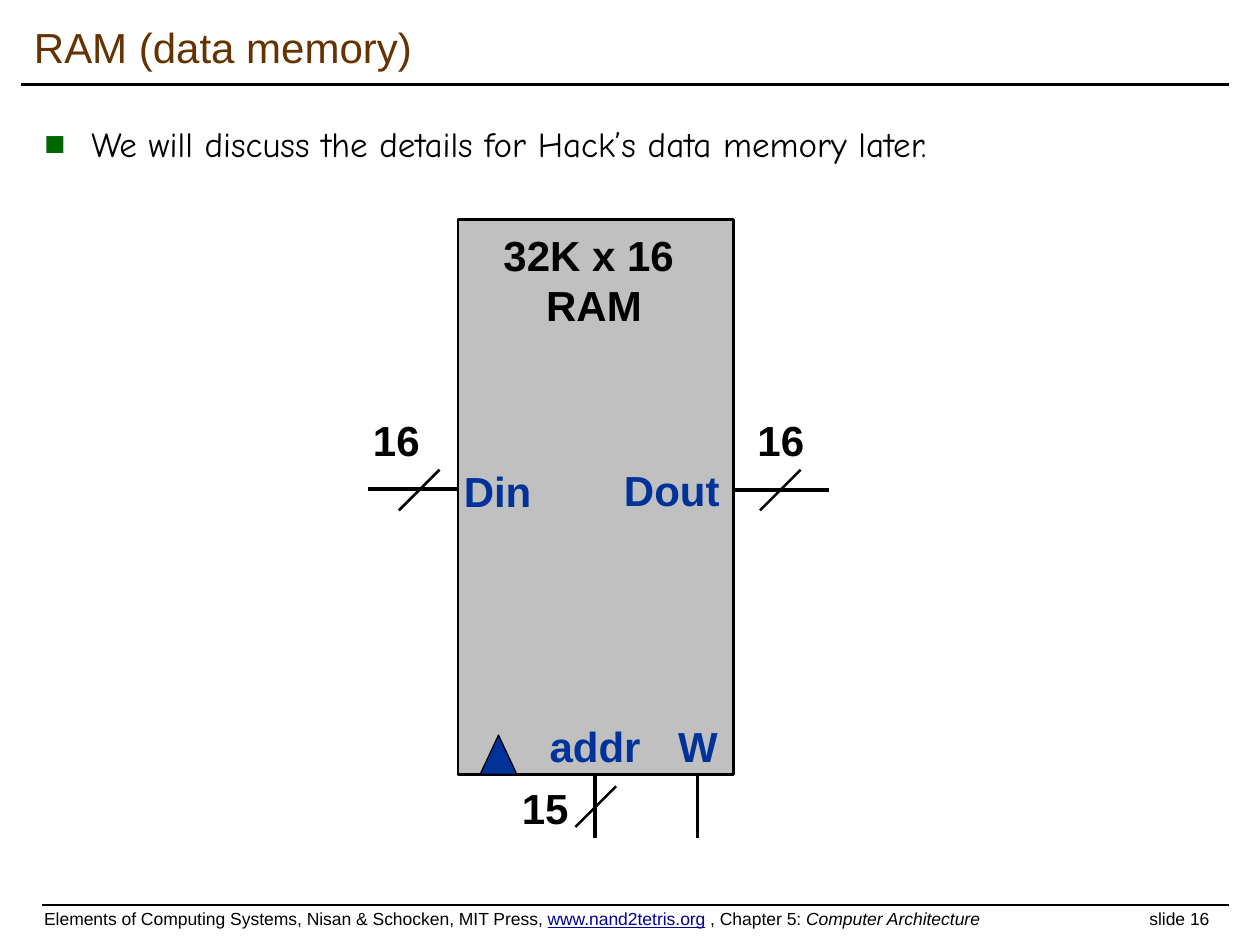
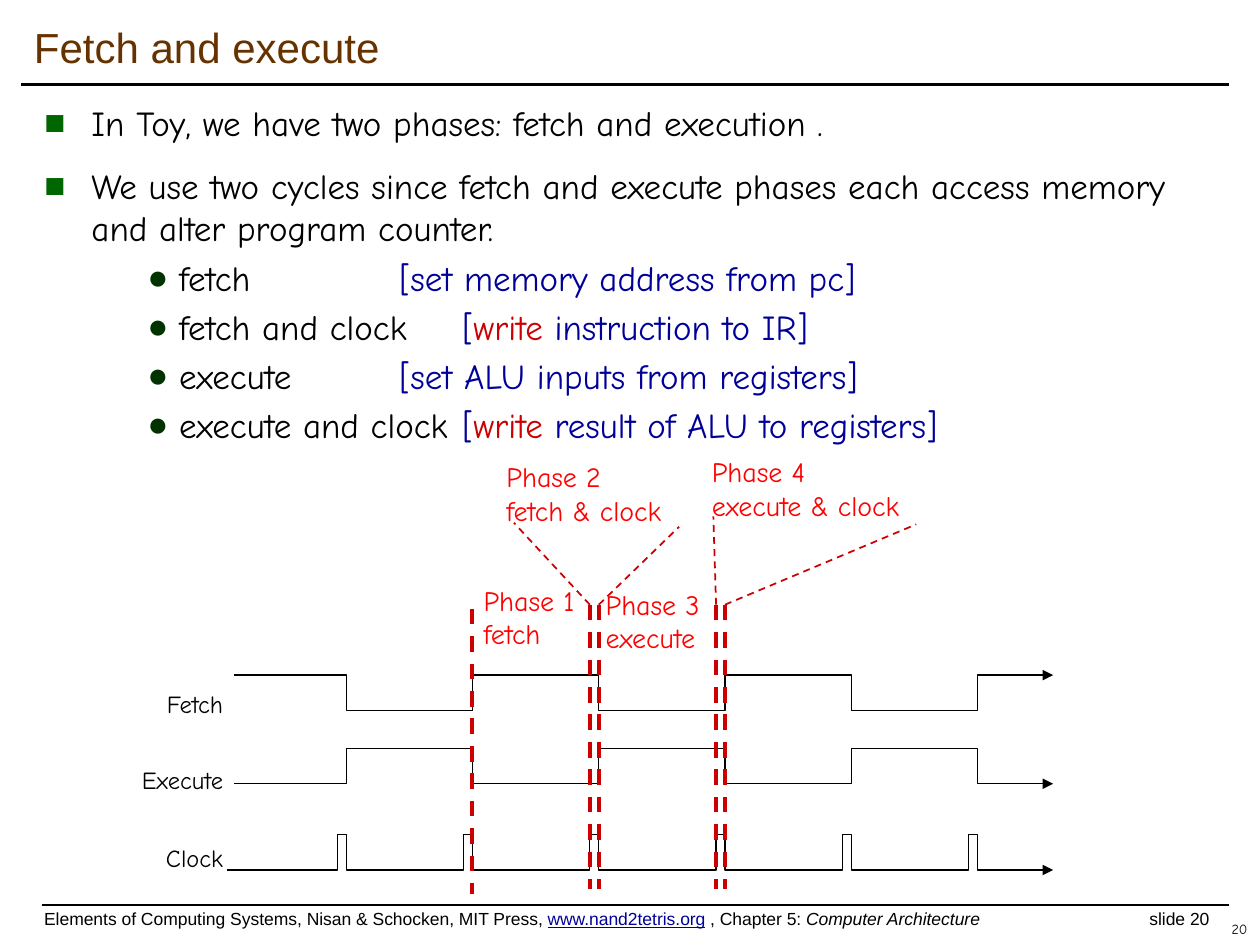
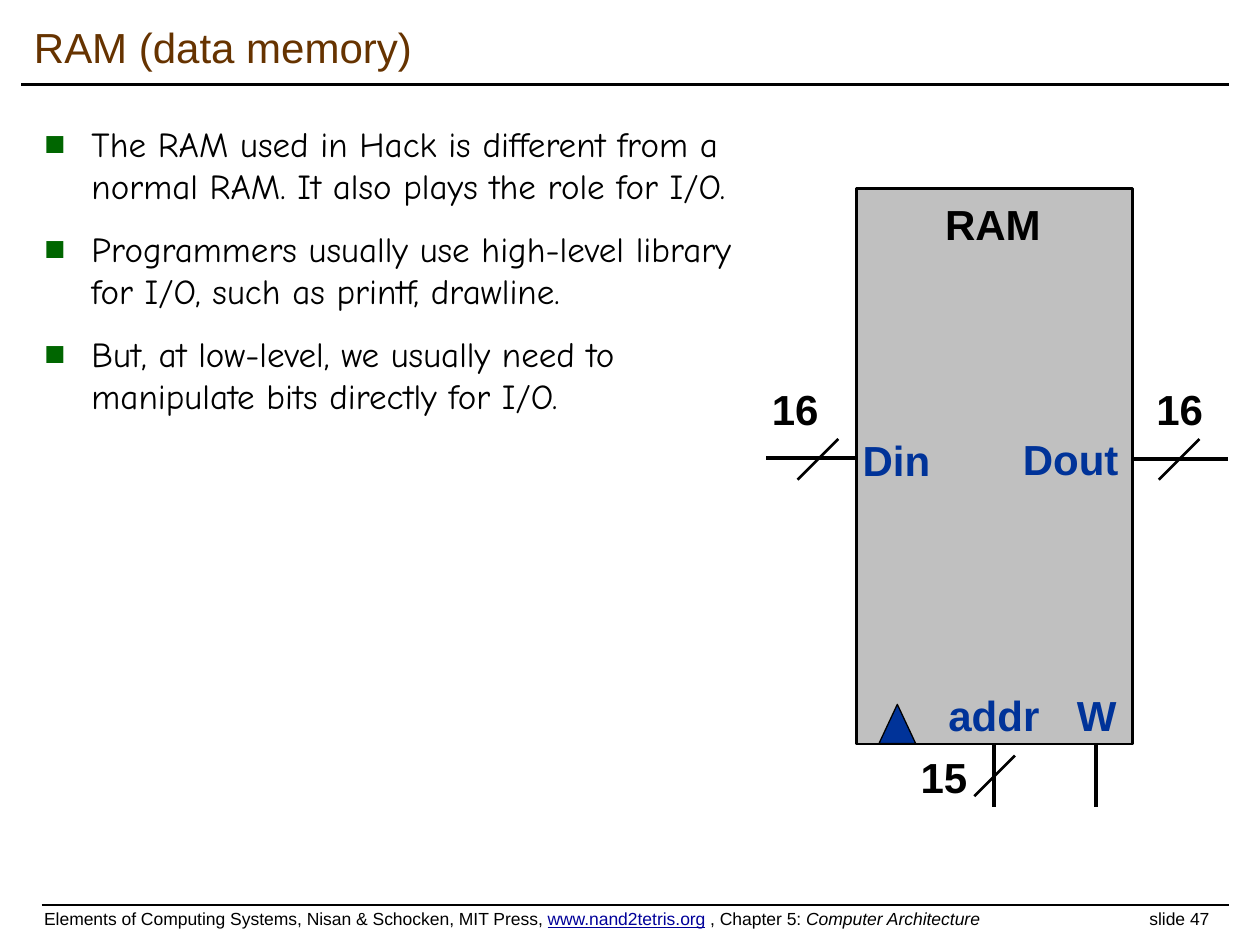
from lxml import etree
from pptx import Presentation
from pptx.dml.color import RGBColor
from pptx.enum.dml import MSO_LINE
from pptx.enum.shapes import MSO_CONNECTOR, MSO_SHAPE
from pptx.enum.text import MSO_ANCHOR, MSO_AUTO_SIZE, PP_ALIGN
from pptx.oxml.ns import qn
from pptx.util import Cm, Pt

LEFT, CENTER, RIGHT = PP_ALIGN.LEFT, PP_ALIGN.CENTER, PP_ALIGN.RIGHT
TOP, MIDDLE = MSO_ANCHOR.TOP, MSO_ANCHOR.MIDDLE
STRAIGHT, DASH = MSO_CONNECTOR.STRAIGHT, MSO_LINE.DASH
RECTANGLE, TRIANGLE = MSO_SHAPE.RECTANGLE, MSO_SHAPE.ISOSCELES_TRIANGLE

BLACK, BROWN, GRAY = "000000", "663300", "C0C0C0"
NAVY, PIN_BLUE = "000099", "003399"
RED, LABEL_RED = "CC0000", "FF0000"
GREEN, DARK_GREEN = "006600", "003300"

TITLE = dict(name="Arial", size=Pt(24), color=BROWN)
BODY = dict(name="Comic Neue", size=Pt(20), color=BLACK)
FOOTER = dict(name="Arial", size=Pt(10), color=BLACK)
CHIP = dict(name="Arial", size=Pt(24), color=BLACK, bold=True)
PIN = dict(CHIP, color=PIN_BLUE)
TRACE = dict(BODY, size=Pt(14))
PHASE = dict(BODY, size=Pt(16), color=LABEL_RED)
NUMBER = dict(BODY, size=Pt(8))

SQUARE = dict(char="■", color=GREEN, left=0.95, hang=0.95)
DISC = dict(char="●", color=DARK_GREEN, left=3.18, hang=0.64)


def rgb(code):
    return RGBColor.from_string(code)


def apply(target, values):
    for name, value in values.items():
        if name == "color":
            target.color.rgb = rgb(value)
        else:
            setattr(target, name, value)


def add_element(parent, tag, **attributes):
    return etree.SubElement(parent, qn(tag), attributes)


def place(shape, box):
    apply(shape, dict(zip(("left", "top", "width", "height"), map(Cm, box))))


def set_bullet(para, bullet):
    properties = para._p.get_or_add_pPr()
    properties.set("marL", str(Cm(bullet["left"])))
    properties.set("indent", str(-Cm(bullet["hang"])))
    color = add_element(properties, "a:buClr")
    add_element(color, "a:srgbClr", val=bullet["color"])
    add_element(properties, "a:buFont", typeface="Arial")
    add_element(properties, "a:buChar", char=bullet["char"])


def write(frame, paras, font, align=LEFT, anchor=TOP, wrap=True, bullet=None, gap=0):
    apply(frame, dict(word_wrap=wrap, auto_size=MSO_AUTO_SIZE.NONE,
                      vertical_anchor=anchor))
    for index, content in enumerate(paras):
        para = frame.paragraphs[0] if index == 0 else frame.add_paragraph()
        if bullet:
            set_bullet(para, bullet)
        apply(para, dict(alignment=align, space_before=Pt(gap if index else 0)))
        spans = [(content, {})] if isinstance(content, str) else content
        for text, changes in spans:
            span = para.add_run()
            span.text = text
            apply(span.font, {**font, **changes})


def add_text(page, box, paras, font, **options):
    shape = page.shapes.add_textbox(*map(Cm, box))
    write(shape.text_frame, paras, font, **options)
    return shape.text_frame


def add_line(page, start, end, width, color=BLACK, dash=None):
    line = page.shapes.add_connector(STRAIGHT, *map(Cm, (*start, *end)))
    apply(line.line, dict(color=color, width=Pt(width), dash_style=dash))
    add_element(line._element.spPr, "a:effectLst")


def add_filled(page, kind, box, fill, width):
    shape = page.shapes.add_shape(kind, *map(Cm, box))
    shape.shadow.inherit = False
    shape.fill.solid()
    shape.fill.fore_color.rgb = rgb(fill)
    apply(shape.line, dict(color=BLACK, width=Pt(width)))


def add_footer(page, number):
    add_line(page, (0.84, 18.24), (24.77, 18.24), 1)
    spans = [("Elements of Computing Systems, Nisan & Schocken, MIT Press, ", {}),
             ("www.nand2tetris.org", dict(color=NAVY, underline=True)),
             (" , Chapter 5: ", {}),
             ("Computer Architecture", dict(italic=True)),
             (f"\tslide {number}", {})]
    frame = add_text(page, (0.64, 18.3, 24.13, 0.69), [spans], FOOTER)
    frame.margin_top = 0
    tabs = add_element(frame.paragraphs[0]._p.get_or_add_pPr(), "a:tabLst")
    add_element(tabs, "a:tab", pos=str(Cm(22.28)), algn="l")


def add_page(deck, title, number, body_box, points):
    page = deck.slides.add_slide(deck.slide_layouts[1])
    heading, body = page.placeholders
    place(heading, (0.43, 0.2, 24.33, 1.47))
    write(heading.text_frame, [title], TITLE, anchor=MIDDLE)
    place(body, body_box)
    write(body.text_frame, points, BODY, bullet=SQUARE, gap=12)
    add_line(page, (0.43, 1.7), (24.77, 1.7), 2)
    add_footer(page, number)
    return page


def draw_ram(page, left, top, heading):
    width, height, reach = 5.56, 11.2, 0.41

    def at(x, y):
        return left + x, top + y

    add_filled(page, RECTANGLE, (left, top, width, height), GRAY, 1.5)
    add_filled(page, TRIANGLE, (*at(0.45, 10.4), 0.74, 0.79), PIN_BLUE, 0.75)

    frame = add_text(page, (*at(0.67, 0.08), 4.15, 2.31), heading, CHIP, align=CENTER)
    if len(heading) > 1:
        frame.paragraphs[0].alignment = LEFT

    labels = [("W", 4.19, 9.98, 1.32, PIN), ("Din", -0.13, 4.83, 1.88, PIN),
              ("addr", 1.6, 9.98, 2.36, PIN), ("Dout", 3.1, 4.81, 2.46, PIN),
              ("16", -1.96, 3.81, 1.47, CHIP), ("16", 5.79, 3.81, 1.47, CHIP),
              ("15", 1.04, 11.23, 1.47, CHIP)]
    for text, x, y, label_width, font in labels:
        add_text(page, (*at(x, y), label_width, 1.3), [text], font, wrap=False)

    wires = [((-1.82, 5.44), (0, 5.44)), ((width, 5.46), (7.49, 5.46)),
             ((2.77, height), (2.77, 12.47)), ((4.83, height), (4.83, 12.47))]
    for start, end in wires:
        add_line(page, at(*start), at(*end), 2.25)
    for x, y in ((-0.78, 5.46), (6.5, 5.46), (2.78, 11.84)):
        add_line(page, at(x + reach, y - reach), at(x - reach, y + reach), 1.5)


def draw_trace(page, points):
    points = [(Cm(x), Cm(y)) for x, y in points]
    builder = page.shapes.build_freeform(*points[0])
    builder.add_line_segments(points[1:], close=False)
    shape = builder.convert_to_shape()
    shape.shadow.inherit = False
    shape.fill.background()
    apply(shape.line, dict(color=BLACK, width=Pt(0.75)))
    add_element(shape._element.spPr.find(qn("a:ln")), "a:tailEnd", type="triangle")


def draw_timing(page, left, top):
    swing, pulse, end = 0.71, 0.18, left + 16.51
    edges = [left + 2.26 + 2.545 * index for index in range(6)]

    def toggle(high, low, first_is_high):
        level, other = (high, low) if first_is_high else (low, high)
        points = [(left, level)]
        for edge in edges:
            points += [(edge, level), (edge, other)]
            level, other = other, level
        return points + [(end, level)]

    execute, clock = top + 1.48, top + 3.22
    base = clock + swing
    ticks = [(left - 0.15, base)]
    for edge in edges:
        ticks += [(edge - pulse, base), (edge - pulse, clock), (edge, clock), (edge, base)]
    draw_trace(page, ticks + [(end, base)])
    draw_trace(page, toggle(execute, execute + swing, False))
    draw_trace(page, toggle(top, top + swing, True))

    for text, y in (("Fetch", 0.16), ("Execute", 1.68), ("Clock", 3.26)):
        add_text(page, (left - 2.97, top + y, 3, 0.84), [text], TRACE, align=RIGHT)

    cuts = [edges[2] - pulse, edges[2], edges[3] - pulse, edges[3]]
    add_line(page, (edges[1], top - 1.34), (edges[1], top + 4.42), 2.25, RED, DASH)
    for x in cuts:
        add_line(page, (x, top - 1.42), (x, top + 4.32), 2.25, RED, DASH)

    phases = [("Phase 1", "fetch", 4.78, -1.98, 2.44),
              ("Phase 3", "execute", 7.24, -1.9, 2.62),
              ("Phase 2", "fetch & clock", 5.24, -4.47, 4.04),
              ("Phase 4", "execute & clock", 9.38, -4.57, 4.67)]
    for name, action, x, y, width in phases:
        add_text(page, (left + x, top + y, width, 1.63), [name, action], PHASE, wrap=False)

    callouts = zip(cuts, ((5.64, -3.07), (8.97, -2.99), (9.66, -3.2), (13.75, -3.04)))
    for cut, (x, y) in callouts:
        add_line(page, (cut, top - 1.42), (left + x, top + y), 1, RED, DASH)


def add_steps(page, box):
    blue, red = dict(color=NAVY), dict(color=RED)
    steps = [[("fetch\t\t\t", {}), ("[set memory address from pc]", blue)],
             [("fetch and clock\t", {}), ("[", blue), ("write", red),
              (" instruction to IR]", blue)],
             [("execute\t\t", {}), ("[set ALU inputs from registers]", blue)],
             [("execute and clock\t", {}), ("[", blue), ("write", red),
              (" result of ALU to registers]", blue)]]
    add_text(page, box, steps, BODY, bullet=DISC, gap=4)


def main():
    deck = Presentation()
    apply(deck, dict(slide_width=Cm(25.4), slide_height=Cm(19.05)))

    page = add_page(deck, "RAM (data memory)", 16, (0.64, 2.34, 23.93, 15.44),
                    ["We will discuss the details for Hack’s data memory later."])
    draw_ram(page, 9.23, 4.42, ["32K x 16", "RAM"])

    page = add_page(deck, "Fetch and execute", 20, (0.64, 1.91, 23.93, 15.44),
                    ["In Toy, we have two phases: fetch and execution .",
                     "We use two cycles since fetch and execute phases each access "
                     "memory and alter program counter."])
    add_text(page, (20.12, 18.42, 5.28, 0.63), ["20"], NUMBER, align=RIGHT, anchor=MIDDLE)
    draw_timing(page, 4.72, 13.61)
    add_steps(page, (0.18, 5.05, 24.99, 5.18))

    page = add_page(deck, "RAM (data memory)", 47, (0.64, 2.34, 14.45, 15.44),
                    ["The RAM used in Hack is different from a normal RAM. "
                     "It also plays the role for I/O.",
                     "Programmers usually use high-level library for I/O, "
                     "such as printf, drawline.",
                     "But, at low-level, we usually need to manipulate bits "
                     "directly for I/O."])
    draw_ram(page, 17.27, 3.8, ["RAM"])

    deck.save("out.pptx")


if __name__ == "__main__":
    main()
